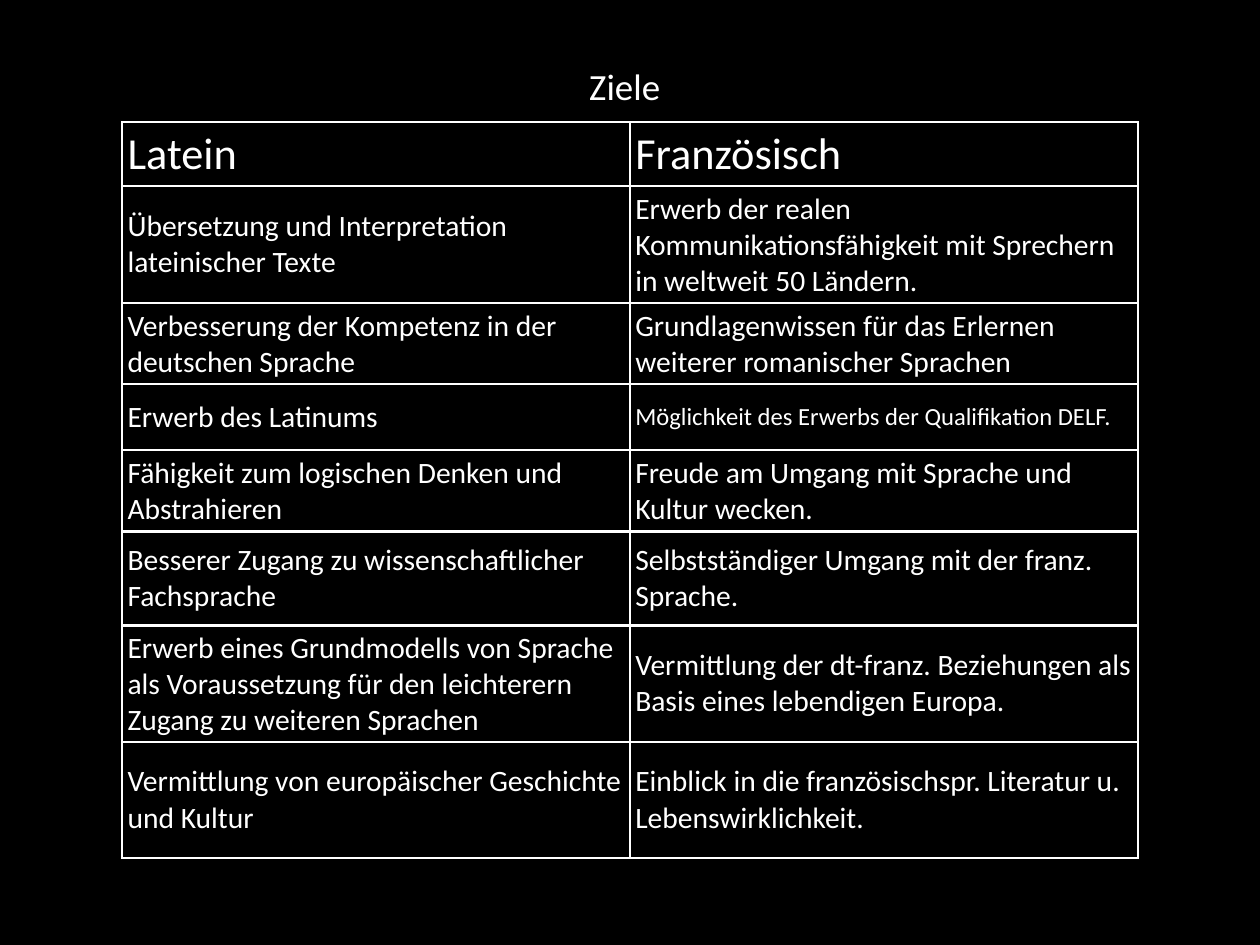
from lxml import etree
from pptx import Presentation
from pptx.dml.color import RGBColor
from pptx.enum.text import MSO_ANCHOR, MSO_AUTO_SIZE, PP_ALIGN
from pptx.oxml import parse_xml
from pptx.oxml.ns import nsdecls
from pptx.util import Inches, Pt

WHITE, BLACK = "FFFFFF", "000000"
FONT = "Calibri"
HEIGHTS = [0.71, 1.31, 0.91, 0.74, 0.91, 1.06, 1.31, 1.3]
GOALS = [
    ("Latein", "Französisch"),
    ("Übersetzung und Interpretation lateinischer Texte",
     "Erwerb der realen Kommunikationsfähigkeit mit Sprechern in weltweit 50 Ländern."),
    ("Verbesserung der Kompetenz in der deutschen Sprache",
     "Grundlagenwissen für das Erlernen weiterer romanischer Sprachen"),
    ("Erwerb des Latinums",
     "Möglichkeit des Erwerbs der Qualifikation DELF."),
    ("Fähigkeit zum logischen Denken und Abstrahieren",
     "Freude am Umgang mit Sprache und Kultur wecken."),
    ("Besserer Zugang zu wissenschaftlicher Fachsprache",
     "Selbstständiger Umgang mit der franz. Sprache."),
    ("Erwerb eines Grundmodells von Sprache als Voraussetzung für den leichterern "
     "Zugang zu weiteren Sprachen",
     "Vermittlung der dt-franz. Beziehungen als Basis eines lebendigen Europa."),
    ("Vermittlung von europäischer Geschichte und Kultur",
     "Einblick in die französischspr. Literatur u. Lebenswirklichkeit."),
]
SMALL = (3, 1)  # the one cell set in smaller type


def color(code):
    return RGBColor.from_string(code)


def write(frame, text, size=24, tint=WHITE, align=PP_ALIGN.LEFT):
    para = frame.paragraphs[0]
    para.alignment = align
    run = para.add_run()
    run.text = text
    run.font.size = Pt(size)
    run.font.name = FONT
    run.font.color.rgb = color(tint)


def outline(cell, tint=WHITE, width=2):
    props = cell._tc.get_or_add_tcPr()
    for index, side in enumerate(("lnL", "lnR", "lnT", "lnB")):
        line = parse_xml(f'<a:{side} {nsdecls("a")} w="{Pt(width)}"/>')
        fill = etree.SubElement(line, line.tag.replace(side, "solidFill"))
        etree.SubElement(fill, line.tag.replace(side, "srgbClr"), val=tint)
        props.insert(index, line)


def add_title(slide, left, top, width, height):
    title = slide.shapes.title
    title.left, title.top = Inches(left), Inches(top)
    title.width, title.height = Inches(width), Inches(height)
    frame = title.text_frame
    frame.margin_left = frame.margin_right = 0
    frame.margin_top = frame.margin_bottom = 0
    frame.vertical_anchor = MSO_ANCHOR.MIDDLE
    frame.auto_size = MSO_AUTO_SIZE.SHAPE_TO_FIT_TEXT
    frame.word_wrap = False
    write(frame, "Ziele", size=30)


def add_goals(slide, left, top, width, height):
    table = slide.shapes.add_table(
        len(GOALS), 2, Inches(left), Inches(top), Inches(width), Inches(height)).table
    table.first_row = table.horz_banding = False
    for col in table.columns:
        col.width = Inches(width / 2)
    for r, pair in enumerate(GOALS):
        table.rows[r].height = Inches(HEIGHTS[r] * height / sum(HEIGHTS))
        for c, text in enumerate(pair):
            cell = table.cell(r, c)
            cell.margin_left = cell.margin_right = Inches(0.06)
            cell.margin_top = cell.margin_bottom = Inches(0.06)
            cell.vertical_anchor = MSO_ANCHOR.MIDDLE
            cell.fill.background()
            outline(cell)
            size = 36 if r == 0 else 20 if (r, c) == SMALL else 24
            write(cell.text_frame, text, size=size)


def main():
    deck = Presentation()
    deck.slide_width, deck.slide_height = Inches(14.22), Inches(10.67)
    slide = deck.slides.add_slide(deck.slide_layouts[5])
    # Black background
    back = slide.background.fill
    back.solid()
    back.fore_color.rgb = color(BLACK)
    # Heading and comparison table
    add_title(slide, 6.65, 0.72, 0.93, 0.5)
    add_goals(slide, 1.38, 1.38, 11.46, 8.26)
    deck.save("out.pptx")


if __name__ == "__main__":
    main()
